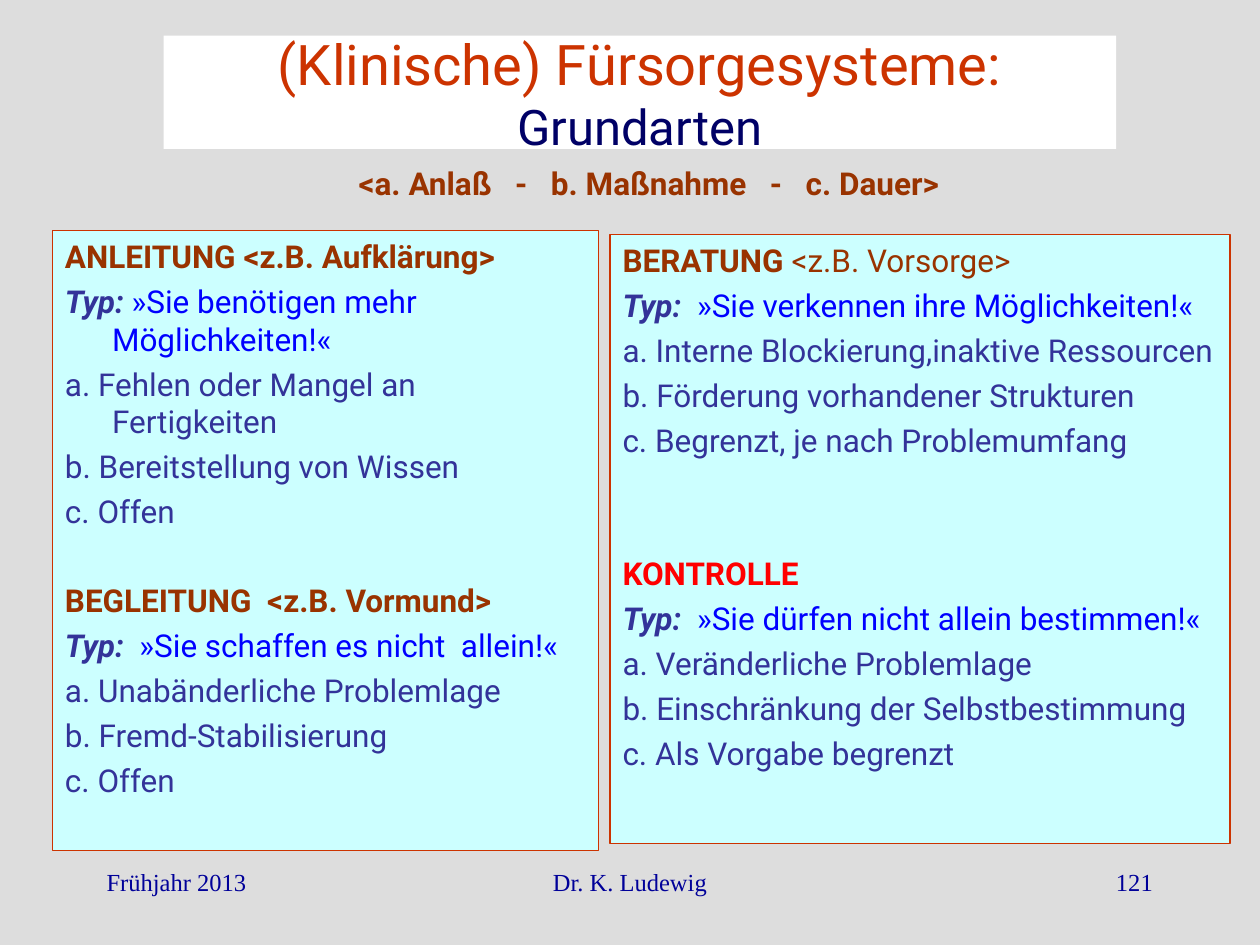
from dataclasses import dataclass

from pptx import Presentation
from pptx import util as u
from pptx.dml import color
from pptx.enum import shapes, text


@dataclass(frozen=True)
class Theme:
    background: str = "DDDDDD"
    title_fill: str = "FFFFFF"
    panel_fill: str = "CCFFFF"
    accent: str = "CC3300"
    subtitle: str = "000066"
    heading: str = "993300"
    warning: str = "FF0000"
    body: str = "333399"
    quote: str = "0000FF"
    footer: str = "000099"
    sans: str = "Roboto"
    serif: str = "Times New Roman"
    title_size: float = 32
    subtitle_size: float = 28
    body_size: float = 18
    footer_size: float = 14
    line_gap: float = 4.1
    line_pitch: float = 25.2


THEME = Theme()
BOLD = {"colour": THEME.heading, "bold": True}

LEFT_SECTIONS = [
    (0, [("ANLEITUNG <z.B. Aufklärung>", BOLD)],
     "Typ: ", "»Sie benötigen mehr Möglichkeiten!«",
     ["a. Fehlen oder Mangel an Fertigkeiten",
      "b. Bereitstellung von Wissen", "c. Offen"]),
    (1, [("BEGLEITUNG  <z.B. Vormund>", BOLD)],
     "Typ:  ", "»Sie schaffen es nicht  allein!«",
     ["a. Unabänderliche Problemlage", "b. Fremd-Stabilisierung", "c. Offen"]),
]
RIGHT_SECTIONS = [
    (0, [("BERATUNG", BOLD), (" <z.B. Vorsorge>", {"colour": THEME.heading})],
     "Typ:  ", "»Sie verkennen ihre Möglichkeiten!«",
     ["a. Interne Blockierung,inaktive Ressourcen",
      "b. Förderung vorhandener Strukturen",
      "c. Begrenzt, je nach Problemumfang"]),
    (2, [("KONTROLLE", {"colour": THEME.warning, "bold": True})],
     "Typ:  ", "»Sie dürfen nicht allein bestimmen!«",
     ["a. Veränderliche Problemlage",
      "b. Einschränkung der Selbstbestimmung",
      "c. Als Vorgabe begrenzt"]),
]


def rgb(value):
    return color.RGBColor.from_string(value)


def add_span(para, words, size=THEME.body_size, font=THEME.sans,
             colour=THEME.body, bold=False, italic=False):
    span = para.add_run()
    span.text = words
    span.font.size = u.Pt(size)
    span.font.name = font
    span.font.color.rgb = rgb(colour)
    span.font.bold = bold
    span.font.italic = italic


def add_label(page, area, words, align=text.PP_ALIGN.LEFT, wrap=True, **style):
    box = page.shapes.add_textbox(*map(u.Cm, area))
    box.text_frame.word_wrap = wrap
    para = box.text_frame.paragraphs[0]
    para.alignment = align
    add_span(para, words, **style)


def format_title(page):
    title = page.shapes.title
    title.left, title.top, title.width, title.height = map(
        u.Cm, (3.3, 0.72, 19.2, 2.28))
    title.fill.solid()
    title.fill.fore_color.rgb = rgb(THEME.title_fill)
    frame = title.text_frame
    frame.word_wrap = True
    frame.auto_size = text.MSO_AUTO_SIZE.NONE
    frame.vertical_anchor = text.MSO_ANCHOR.MIDDLE
    para = frame.paragraphs[0]
    para.alignment = text.PP_ALIGN.CENTER
    add_span(para, "(Klinische) Fürsorgesysteme: ",
             size=THEME.title_size, colour=THEME.accent)
    add_span(para, "Grundarten",
             size=THEME.subtitle_size, colour=THEME.subtitle)


def section_lines(section):
    skipped, heading, lead, quote, items = section
    yield skipped, heading
    yield 0, [(lead, {"bold": True, "italic": True}),
              (quote, {"colour": THEME.quote})]
    for item in items:
        yield 0, [(item, {})]


def add_panel(page, area, sections):
    panel = page.shapes.add_shape(shapes.MSO_SHAPE.RECTANGLE, *map(u.Cm, area))
    panel.shadow.inherit = False
    panel.fill.solid()
    panel.fill.fore_color.rgb = rgb(THEME.panel_fill)
    panel.line.color.rgb = rgb(THEME.accent)
    panel.line.width = u.Pt(0.75)
    frame = panel.text_frame
    frame.word_wrap = True
    frame.vertical_anchor = text.MSO_ANCHOR.TOP
    lines = [line for section in sections for line in section_lines(section)]
    for index, (skipped, spans) in enumerate(lines):
        para = frame.add_paragraph() if index else frame.paragraphs[0]
        para.alignment = text.PP_ALIGN.LEFT
        gap = THEME.line_gap + skipped * THEME.line_pitch
        para.space_before = u.Pt(gap if index else 0)
        properties = para._p.get_or_add_pPr()
        properties.set("marL", str(u.Cm(0.95)))
        properties.set("indent", str(-u.Cm(0.95)))
        for words, style in spans:
            add_span(para, words, **style)


def add_footer(page):
    entries = [
        (1.9, 5.29, "Frühjahr 2013", text.PP_ALIGN.LEFT),
        (8.68, 8.04, "Dr. K. Ludewig", text.PP_ALIGN.CENTER),
        (18.2, 5.29, "121", text.PP_ALIGN.RIGHT),
    ]
    for left, width, words, align in entries:
        add_label(page, (left, 17.35, width, 1.27), words, align,
                  size=THEME.footer_size, font=THEME.serif, colour=THEME.footer)


def main():
    deck = Presentation()
    deck.slide_width, deck.slide_height = u.Cm(25.4), u.Cm(19.05)
    page = deck.slides.add_slide(deck.slide_layouts.get_by_name("Title Only"))
    page.background.fill.solid()
    page.background.fill.fore_color.rgb = rgb(THEME.background)
    add_footer(page)
    format_title(page)
    add_panel(page, (1.06, 4.65, 11, 12.5), LEFT_SECTIONS)
    add_panel(page, (12.3, 4.73, 12.5, 12.27), RIGHT_SECTIONS)
    add_label(page, (6.98, 3.18, 12.83, 1.02),
              "<a. Anlaß   -   b. Maßnahme   -   c. Dauer>", wrap=False, **BOLD)
    deck.save("out.pptx")


if __name__ == "__main__":
    main()
